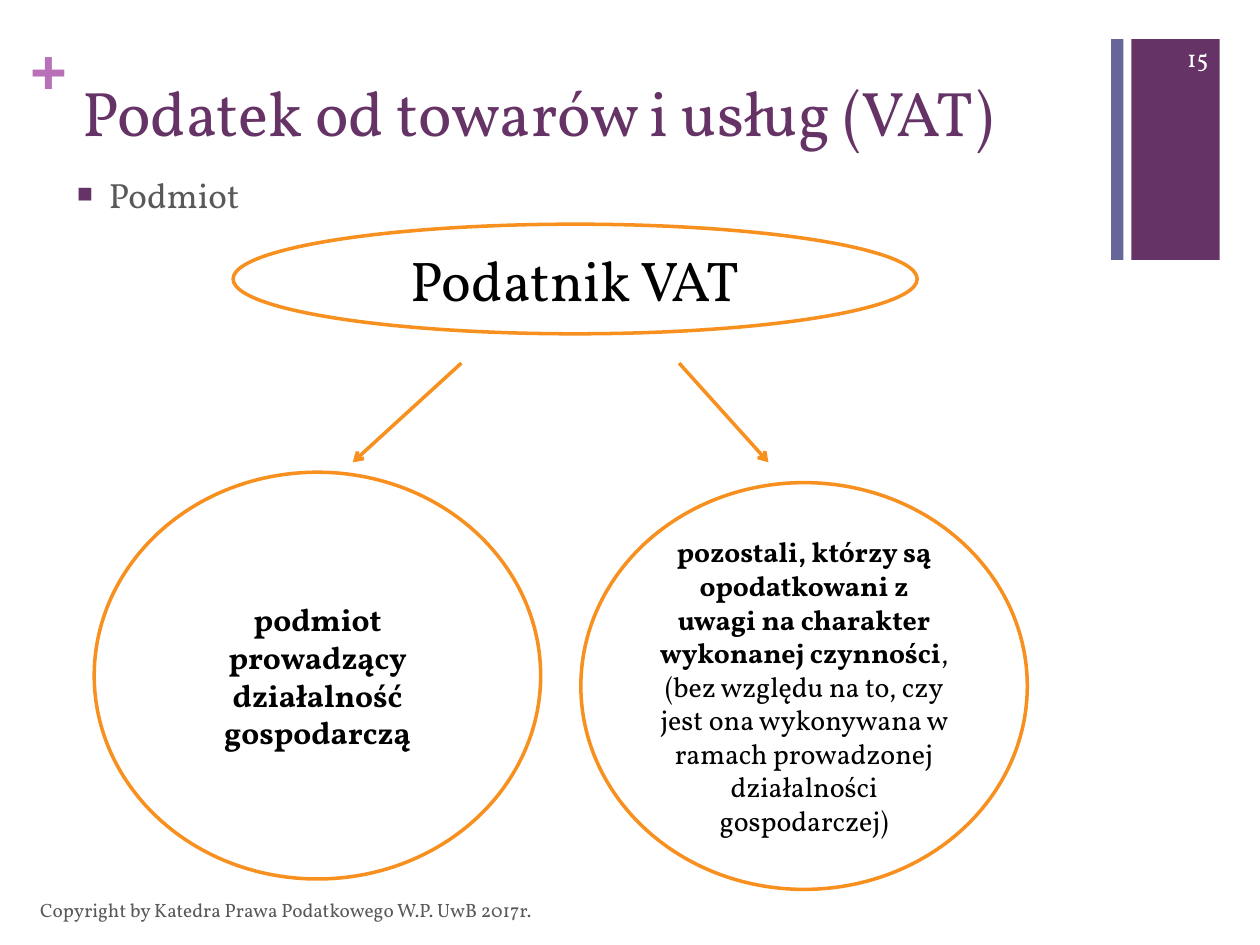
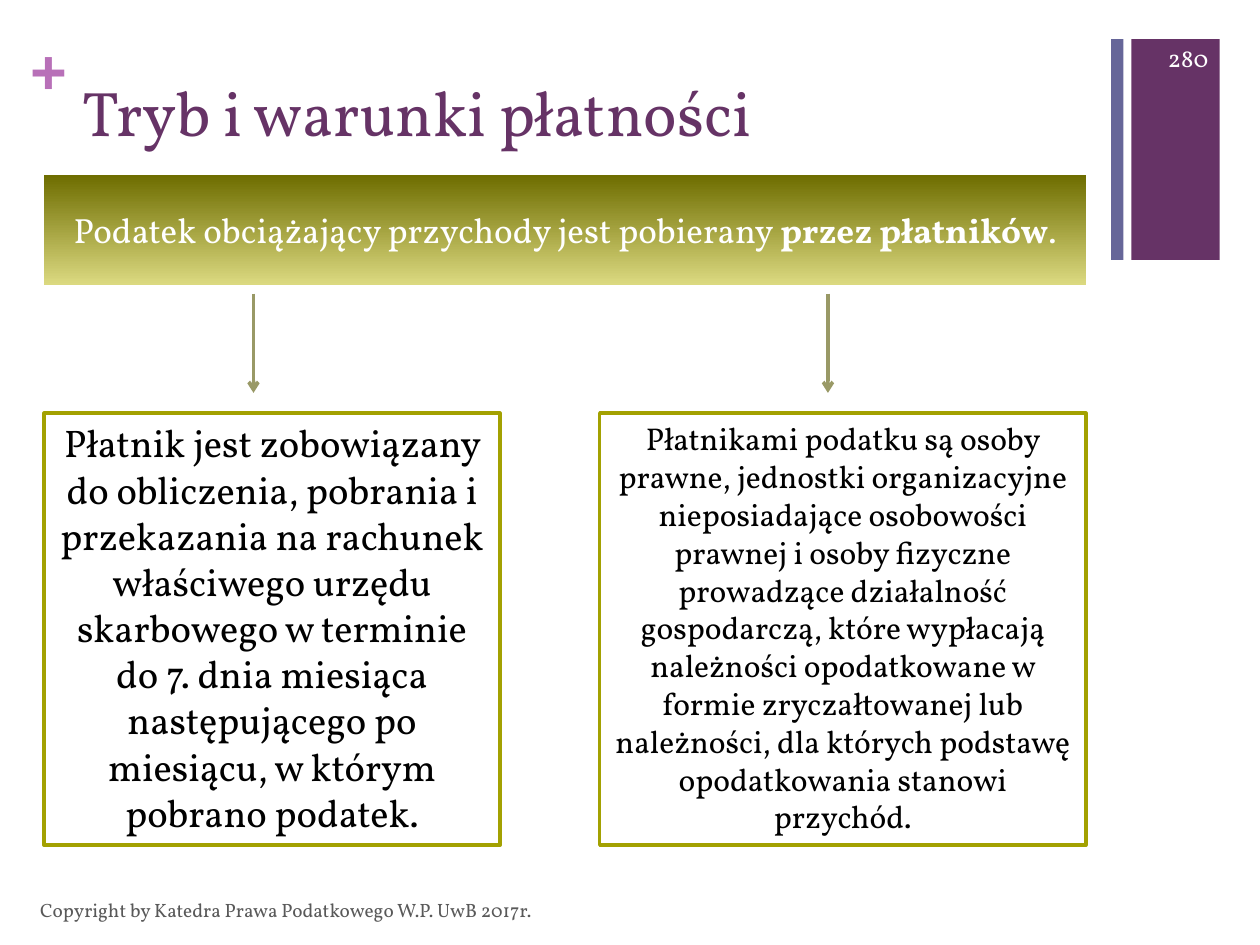
import pptx
import pptx.dml.color
import pptx.enum.dml
import pptx.enum.shapes
import pptx.enum.text
import pptx.oxml
import pptx.oxml.ns
import pptx.util

Cm, Pt = pptx.util.Cm, pptx.util.Pt
RGBColor = pptx.dml.color.RGBColor
SHAPE = pptx.enum.shapes.MSO_SHAPE
ALIGN = pptx.enum.text.PP_ALIGN
ANCHOR = pptx.enum.text.MSO_ANCHOR

PURPLE = RGBColor(0x66, 0x33, 0x66)
BLUE = RGBColor(0x66, 0x66, 0x99)
PINK = RGBColor(0xB8, 0x70, 0xB8)
GREY = RGBColor(0x59, 0x59, 0x59)
ORANGE = RGBColor(0xF7, 0x90, 0x1E)
OLIVE = RGBColor(0xA3, 0xA1, 0x01)
OLIVE_DARK = RGBColor(0x6E, 0x6D, 0x00)
OLIVE_LIGHT = RGBColor(0xDB, 0xD9, 0x80)
KHAKI = RGBColor(0x99, 0x99, 0x66)
WHITE = RGBColor(0xFF, 0xFF, 0xFF)
BLACK = RGBColor(0x00, 0x00, 0x00)

FONT = "Vollkorn"
FOOTER = "Copyright by Katedra Prawa Podatkowego W.P. UwB 2017r."
LINE_WIDTH = Pt(2)
TITLE_ONLY, TITLE_AND_BODY = 5, 1


def set_all(obj, values):
    for name, value in values.items():
        setattr(obj, name, value)


def append_xml(parent, *fragments):
    for fragment in fragments:
        tag, rest = fragment.split(" ", 1)
        xml = f"<a:{tag} {pptx.oxml.ns.nsdecls('a')} {rest}"
        parent.append(pptx.oxml.parse_xml(xml))


class Deck:
    def __init__(self):
        self.prs = pptx.Presentation()
        set_all(self.prs, {"slide_width": Cm(25.4), "slide_height": Cm(19.05)})
        self.s = None

    def slide(self, title, number, layout, title_height):
        """Start a slide with the shared bands, title, footer and number."""
        self.s = self.prs.slides.add_slide(self.prs.slide_layouts[layout])
        self.shape(SHAPE.RECTANGLE, (22.81, 0.79, 1.78, 4.45), PURPLE)
        self.shape(SHAPE.RECTANGLE, (22.4, 0.79, 0.25, 4.45), BLUE)
        plus = self.label("+", (0.61, 0.64, 0.74, 1.55), 36, PINK,
                          anchor=ANCHOR.TOP, bold=True, font="Arial")
        set_all(plus.text_frame, dict.fromkeys(
            ("margin_left", "margin_top", "margin_right", "margin_bottom"), 0))
        self.placeholder(self.s.shapes.title, title,
                         (1.4, 1.35, 20.98, title_height), 36, PURPLE)
        self.label(FOOTER, (0.56, 17.83, 17.02, 1.02), 11, GREY)
        self.label(number, (23.06, 0.66, 1.55, 1.02), 14, WHITE, ALIGN.RIGHT)

    def put_text(self, sp, runs, size, color, align=ALIGN.LEFT,
                 anchor=ANCHOR.MIDDLE, bold=False, font=FONT):
        """Fill sp with one paragraph; runs is a string or (text, bold) pairs."""
        if isinstance(runs, str):
            runs = [(runs, bold)]
        tf = sp.text_frame
        set_all(tf, {"word_wrap": True, "vertical_anchor": anchor,
                     "auto_size": pptx.enum.text.MSO_AUTO_SIZE.NONE})
        p = tf.paragraphs[0]
        p.alignment = align
        for text, is_bold in runs:
            r = p.add_run()
            r.text = text
            set_all(r.font, {"name": font, "size": Pt(size), "bold": is_bold})
            r.font.color.rgb = color
        return p

    def label(self, text, box, size, color, align=ALIGN.LEFT, **style):
        sp = self.s.shapes.add_textbox(*map(Cm, box))
        self.put_text(sp, text, size, color, align, **style)
        return sp

    def placeholder(self, sp, text, box, size, color):
        set_all(sp, dict(zip(("left", "top", "width", "height"), map(Cm, box))))
        return self.put_text(sp, text, size, color, anchor=ANCHOR.TOP)

    def bullet(self, text, box):
        p = self.placeholder(self.s.placeholders[1], text, box, 20, GREY)
        set_all(p, {"line_spacing": 0.8, "space_before": Pt(0)})
        pPr = p._p.get_or_add_pPr()
        pPr.set("marL", str(Cm(0.64)))
        pPr.set("indent", str(Cm(-0.64)))
        append_xml(pPr, f'buClr ><a:srgbClr val="{PURPLE}"/></a:buClr>',
                   'buSzPct val="75000"/>', 'buFont typeface="Arial"/>',
                   'buChar char="■"/>')

    def shape(self, kind, box, fill=WHITE, line=None):
        sp = self.s.shapes.add_shape(kind, *map(Cm, box))
        sp.shadow.inherit = False
        if isinstance(fill, RGBColor):
            sp.fill.solid()
            sp.fill.fore_color.rgb = fill
        else:
            sp.fill.gradient()
            sp.fill.gradient_angle = 270
            for stop, color in zip(sp.fill.gradient_stops, fill):
                stop.color.rgb = color
        if line is None:
            sp.line.fill.background()
        else:
            sp.line.color.rgb = line
            sp.line.width = LINE_WIDTH
        return sp

    def node(self, kind, box, runs, size, line=None, fill=WHITE, color=BLACK, **style):
        """Add a shape with centred text."""
        sp = self.shape(kind, box, fill, line)
        self.put_text(sp, runs, size, color, ALIGN.CENTER, **style)

    def arrow(self, start, end, color):
        c = self.s.shapes.add_connector(pptx.enum.shapes.MSO_CONNECTOR.STRAIGHT,
                                        *map(Cm, start + end))
        c.line.color.rgb = color
        c.line.width = LINE_WIDTH
        spPr = c._element.spPr
        append_xml(spPr.get_or_add_ln(), 'tailEnd type="arrow"/>')
        append_xml(spPr, "effectLst />")


def vat_slide(deck):
    deck.slide("Podatek od towarów i usług (VAT)", "15", TITLE_AND_BODY, 2.4)
    deck.bullet("Podmiot", (1.3, 3.53, 20.12, 1.8))
    oval = SHAPE.FLOWCHART_CONNECTOR
    deck.node(oval, (4.7, 4.52, 13.79, 2.21), "Podatnik VAT", 32, ORANGE)
    deck.node(oval, (1.9, 9.52, 9, 8.2),
              "podmiot prowadzący działalność gospodarczą", 18, ORANGE, bold=True)
    others = [
        ("pozostali, którzy są opodatkowani z uwagi na charakter "
         "wykonanej czynności", True),
        (", (bez względu na to, czy jest ona wykonywana w ramach "
         "prowadzonej działalności gospodarczej)", False),
    ]
    deck.node(oval, (11.71, 9.73, 9, 8.2), others, 16, ORANGE)
    for x_start, x_end in ((13.69, 15.49), (9.3, 7.11)):
        deck.arrow((x_start, 7.32), (x_end, 9.32), ORANGE)


def payment_slide(deck):
    deck.slide("Tryb i warunki płatności", "280", TITLE_ONLY, 3.1)
    rule = [("Podatek obciążający przychody jest pobierany ", False),
            ("przez płatników", True), (".", False)]
    deck.node(SHAPE.RECTANGLE, (0.89, 3.53, 21.01, 2.21), rule, 20,
              fill=(OLIVE_DARK, OLIVE_LIGHT), color=WHITE)
    duty = ("Płatnik jest zobowiązany do obliczenia, pobrania i przekazania na "
            "rachunek właściwego urzędu skarbowego w terminie do 7. dnia miesiąca "
            "następującego po miesiącu, w którym pobrano podatek.")
    payers = ("Płatnikami podatku są osoby prawne, jednostki organizacyjne "
              "nieposiadające osobowości prawnej i osoby fizyczne prowadzące "
              "działalność gospodarczą, które wypłacają należności opodatkowane "
              "w formie zryczałtowanej lub należności, dla których podstawę "
              "opodatkowania stanowi przychód.")
    for x, width, text, size, arrow_x in ((0.89, 9.19, duty, 22, 5.11),
                                          (12.09, 9.8, payers, 18, 16.69)):
        deck.node(SHAPE.RECTANGLE, (x, 8.33, width, 8.71), text, size, OLIVE,
                  anchor=ANCHOR.TOP)
        deck.arrow((arrow_x, 5.92), (arrow_x, 7.92), KHAKI)


def main():
    deck = Deck()
    vat_slide(deck)
    payment_slide(deck)
    deck.prs.save("out.pptx")


if __name__ == "__main__":
    main()
